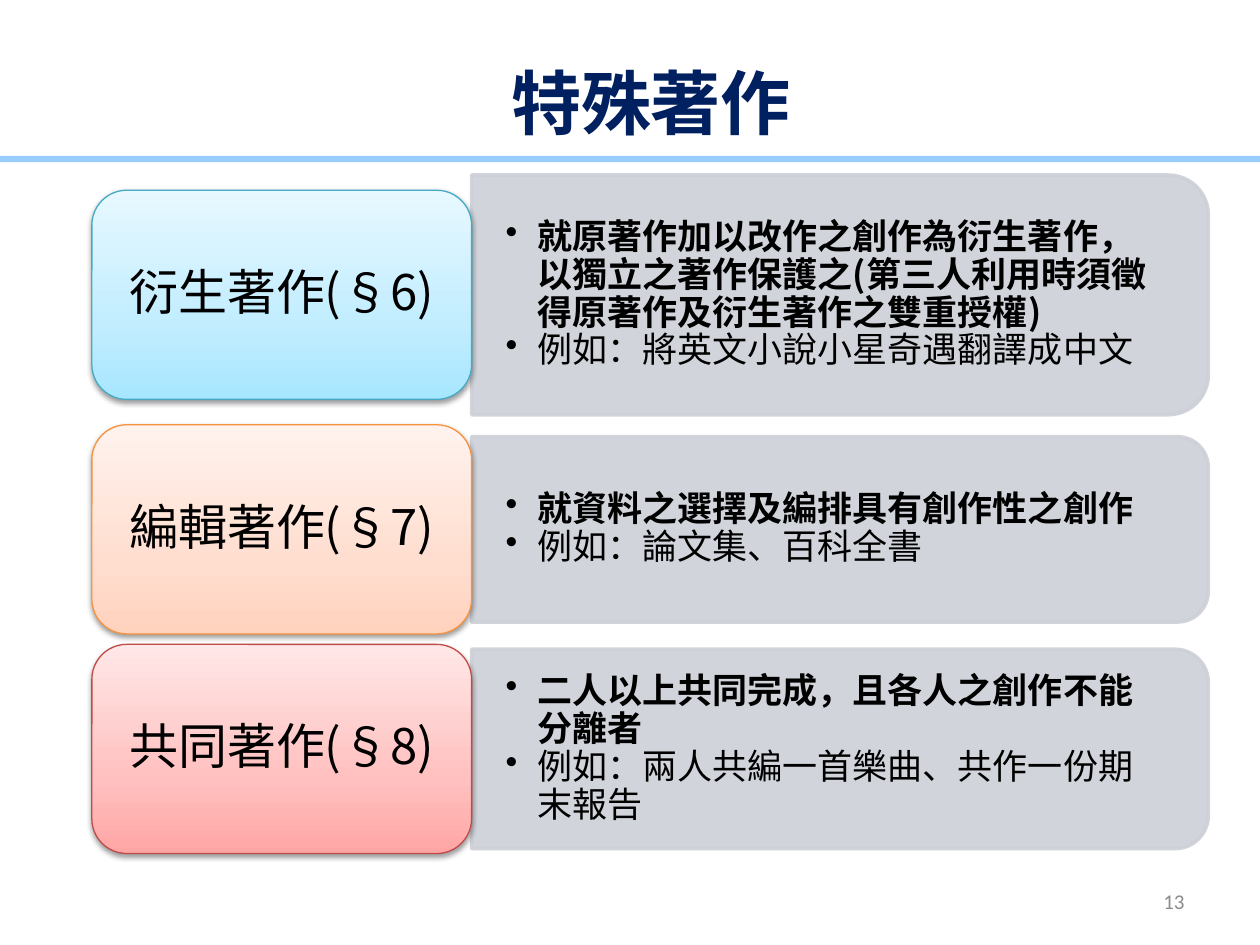
import copy
from dataclasses import dataclass

import lxml.etree
import pptx
import pptx.dml.color
import pptx.enum.dml
import pptx.enum.shapes
import pptx.enum.text
import pptx.oxml
import pptx.oxml.ns
import pptx.util

Pt = pptx.util.Pt
qn = pptx.oxml.ns.qn
ALIGN = pptx.enum.text.PP_ALIGN
SHAPE = pptx.enum.shapes.MSO_SHAPE

COLORS = {
    "title": "002060",
    "rule": "99CCFF",
    "panel": "CDD0D7",
    "text": "000000",
    "page": "8C8C8C",
}
CJK_FONT = "Noto Sans CJK SC"
LABEL_LEFT, LABEL_WIDTH, LABEL_HEIGHT = 52.5, 217, 119.5
PANEL_LEFT = LABEL_LEFT + LABEL_WIDTH
PANEL_WIDTH = 421


@dataclass
class WorkType:
    label: str
    definition: str
    example: str
    center: float
    panel_height: float
    outline: str
    gradient: tuple[str, str, str]  # bottom to top


WORK_TYPES = [
    WorkType("衍生著作(§6)",
             "就原著作加以改作之創作為衍生著作，以獨立之著作保護之"
             "(第三人利用時須徵得原著作及衍生著作之雙重授權)",
             "例如：將英文小說小星奇遇翻譯成中文",
             168.5, 137, "46AAC5", ("A7E6FF", "C1EDFF", "E7F8FF")),
    WorkType("編輯著作(§7)",
             "就資料之選擇及編排具有創作性之創作",
             "例如：論文集、百科全書",
             302.5, 106, "F69240", ("FFD2BD", "FFDED0", "FFF2ED")),
    WorkType("共同著作(§8)",
             "二人以上共同完成，且各人之創作不能分離者",
             "例如：兩人共編一首樂曲、共作一份期末報告",
             428, 114, "BF4C48", ("FFA6A5", "FFC0BF", "FFE7E7")),
]


def rgb(value: str) -> pptx.dml.color.RGBColor:
    return pptx.dml.color.RGBColor.from_string(value)


def add_run(paragraph, text: str, size: float, color: str,
            bold: bool = False, font: str = CJK_FONT) -> None:
    run = paragraph.add_run()
    run.text = text
    run.font.size = Pt(size)
    run.font.bold = bold
    run.font.color.rgb = rgb(color)
    run.font.name = font
    east_asian = lxml.etree.SubElement(run.font._element, qn("a:ea"))
    east_asian.set("typeface", font)


def prepare_frame(shape, horizontal: float = 7.2, vertical: float = 3.6):
    frame = shape.text_frame
    frame.word_wrap = True
    frame.vertical_anchor = pptx.enum.text.MSO_ANCHOR.MIDDLE
    frame.margin_left = frame.margin_right = Pt(horizontal)
    frame.margin_top = frame.margin_bottom = Pt(vertical)
    return frame


def add_text(slide, left: float, top: float, width: float, height: float,
             text: str, size: float, color: str, alignment,
             bold: bool = False, font: str = CJK_FONT) -> None:
    box = slide.shapes.add_textbox(Pt(left), Pt(top), Pt(width), Pt(height))
    paragraph = prepare_frame(box).paragraphs[0]
    paragraph.alignment = alignment
    add_run(paragraph, text, size, color, bold, font)


def add_bullet(paragraph) -> None:
    properties = paragraph._p.get_or_add_pPr()
    properties.set("marL", str(Pt(18)))
    properties.set("indent", str(-Pt(18)))
    bullet = lxml.etree.SubElement(properties, qn("a:buChar"))
    bullet.set("char", "•")


def add_panel(slide, work: WorkType) -> None:
    # A quarter turn puts the two rounded corners on the right
    middle = PANEL_LEFT + PANEL_WIDTH / 2
    panel = slide.shapes.add_shape(
        SHAPE.ROUND_2_SAME_RECTANGLE,
        Pt(middle - work.panel_height / 2), Pt(work.center - PANEL_WIDTH / 2),
        Pt(work.panel_height), Pt(PANEL_WIDTH))
    panel.rotation = 90
    panel.shadow.inherit = False
    panel.fill.solid()
    panel.fill.fore_color.rgb = rgb(COLORS["panel"])
    panel.line.color.rgb = rgb(COLORS["panel"])
    panel.line.width = Pt(2)
    for color in panel._element.spPr.iter(qn("a:srgbClr")):
        lxml.etree.SubElement(color, qn("a:alpha")).set("val", "90000")

    # Upright text over the panel
    height = work.panel_height * 0.9
    box = slide.shapes.add_textbox(Pt(PANEL_LEFT), Pt(work.center - height / 2),
                                   Pt(PANEL_WIDTH - 6), Pt(height))
    frame = prepare_frame(box, 19.5, 10)
    for index, text in enumerate((work.definition, work.example)):
        paragraph = frame.add_paragraph() if index else frame.paragraphs[0]
        add_bullet(paragraph)
        paragraph.level = 1
        paragraph.line_spacing = 0.9
        add_run(paragraph, text, 20, COLORS["text"], bold=index == 0)


def fill_gradient(shape, colors: tuple[str, str, str]) -> None:
    shape.fill.gradient()
    shape.fill.gradient_angle = 90
    stop_list = shape._element.spPr.find(qn("a:gradFill")).find(qn("a:gsLst"))
    stop_list.append(copy.deepcopy(stop_list[-1]))
    for stop, position, color in zip(shape.fill.gradient_stops, (0, 0.35, 1), colors):
        stop.position = position
        stop.color.rgb = rgb(color)


def add_soft_shadow(shape) -> None:
    shape.shadow.inherit = False
    effects = shape._element.spPr.find(qn("a:effectLst"))
    shadow = lxml.etree.SubElement(effects, qn("a:outerShdw"))
    for name, value in (("blurRad", Pt(3.1)), ("dist", Pt(1.6)),
                        ("dir", 5400000), ("rotWithShape", 0)):
        shadow.set(name, str(int(value)))
    color = lxml.etree.SubElement(shadow, qn("a:srgbClr"))
    color.set("val", COLORS["text"])
    lxml.etree.SubElement(color, qn("a:alpha")).set("val", "38000")


def add_label(slide, work: WorkType) -> None:
    label = slide.shapes.add_shape(
        SHAPE.ROUNDED_RECTANGLE, Pt(LABEL_LEFT), Pt(work.center - LABEL_HEIGHT / 2),
        Pt(LABEL_WIDTH), Pt(LABEL_HEIGHT))
    fill_gradient(label, work.gradient)
    label.line.color.rgb = rgb(work.outline)
    label.line.width = Pt(0.75)
    add_soft_shadow(label)
    paragraph = prepare_frame(label, 8.5, 4.5).paragraphs[0]
    paragraph.alignment = ALIGN.CENTER
    paragraph.line_spacing = 0.9
    paragraph.space_after = Pt(9.8)
    add_run(paragraph, work.label, 28, COLORS["text"])


def main() -> None:
    presentation = pptx.Presentation()
    presentation.slide_width = Pt(720)
    presentation.slide_height = Pt(540)
    slide = presentation.slides.add_slide(presentation.slide_layouts[6])

    # Rule under the title
    rule = slide.shapes.add_shape(SHAPE.RECTANGLE, Pt(-3), Pt(89), Pt(724.5), Pt(3.6))
    rule.shadow.inherit = False
    rule.fill.solid()
    rule.fill.fore_color.rgb = rgb(COLORS["rule"])
    rule.line.fill.background()

    # Title
    add_text(slide, 48, 26, 648, 64, "特殊著作", 40, COLORS["title"],
             ALIGN.CENTER, bold=True)

    # One row per type of work
    for work in WORK_TYPES:
        add_panel(slide, work)
        add_label(slide, work)

    # Page number
    add_text(slide, 516, 500.5, 168, 28.5, "13", 12, COLORS["page"],
             ALIGN.RIGHT, font="Calibri")

    presentation.save("out.pptx")


if __name__ == "__main__":
    main()
